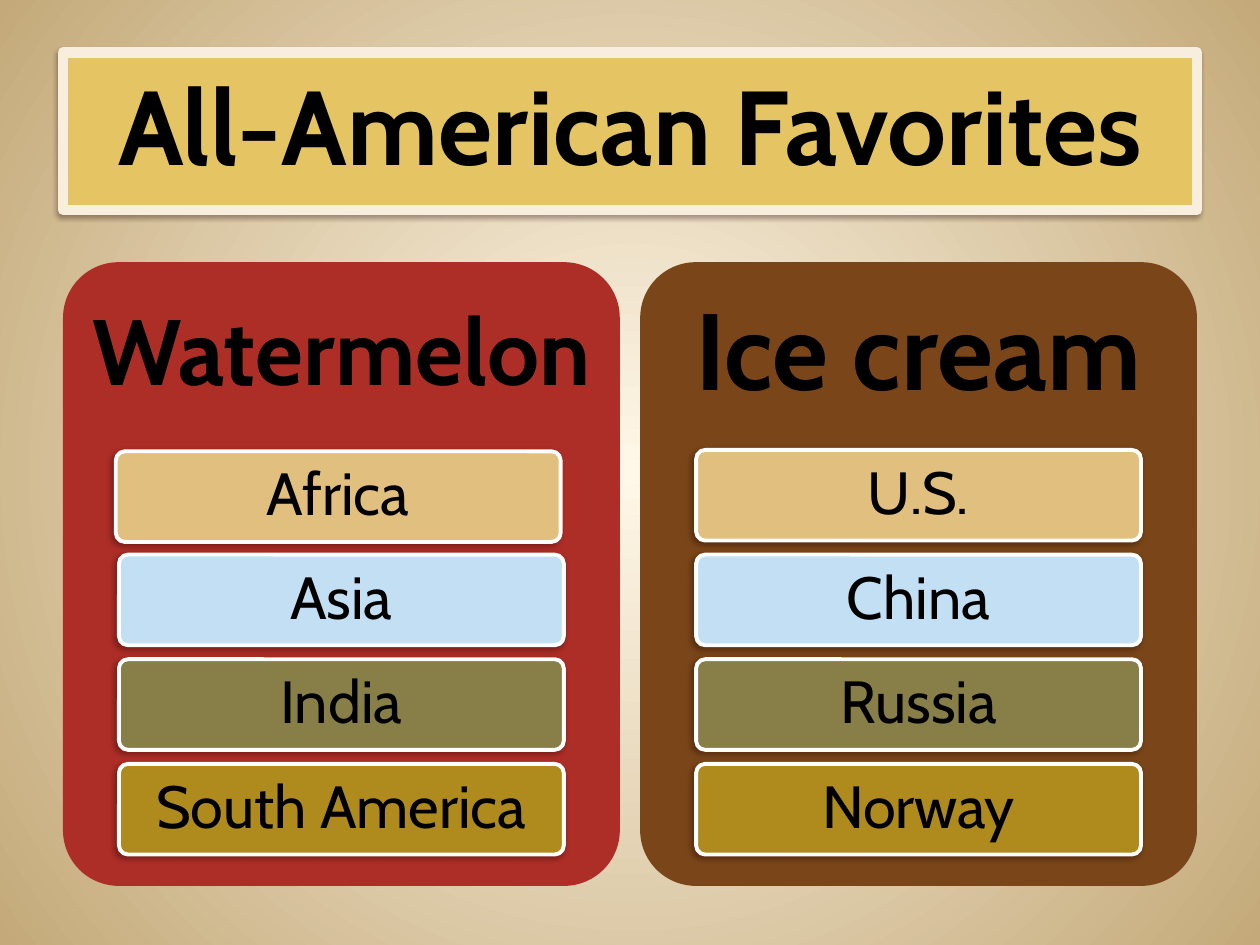
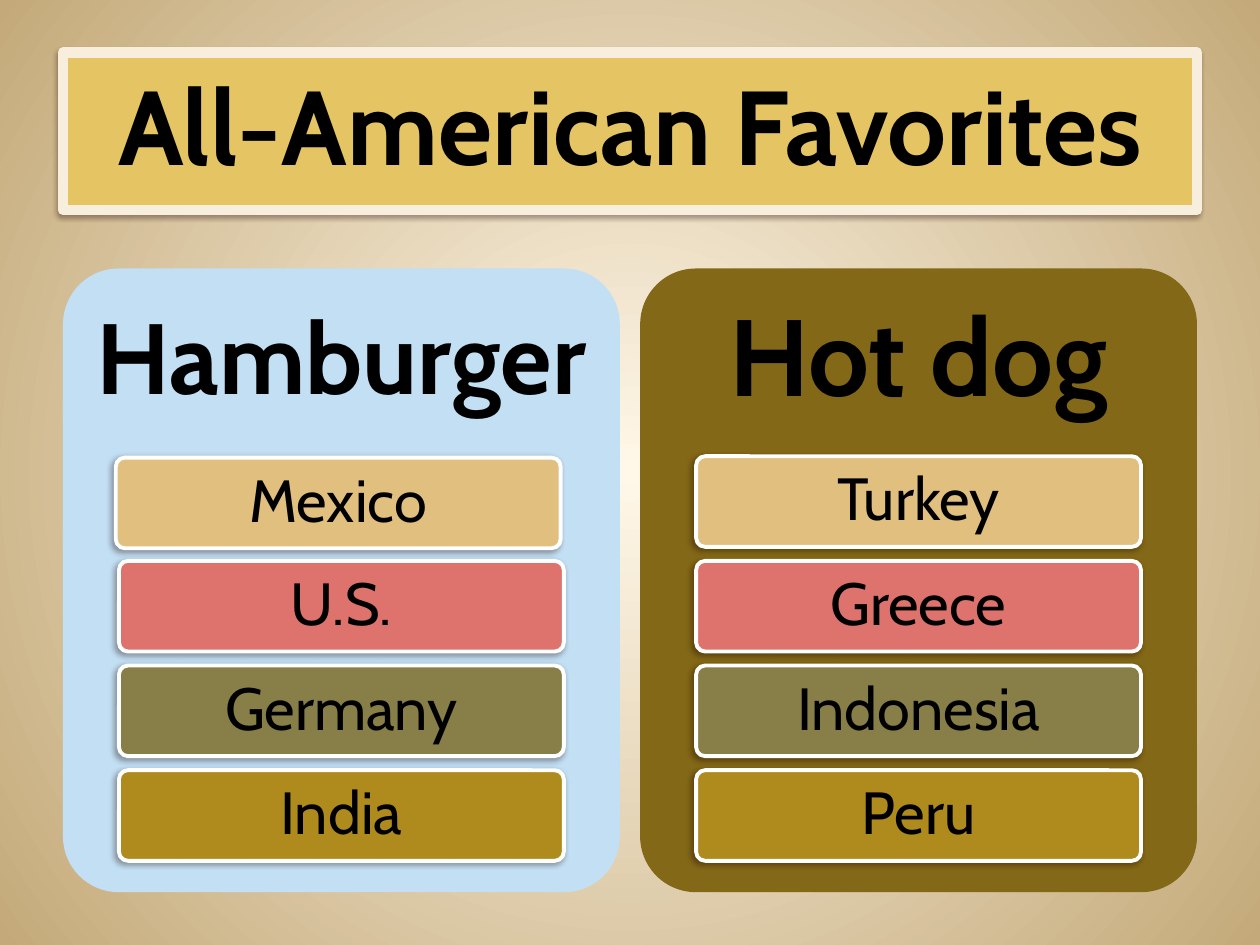
from lxml.etree import SubElement
from pptx import Presentation
from pptx.dml.color import RGBColor
from pptx.enum.shapes import MSO_SHAPE
from pptx.enum.text import MSO_ANCHOR, PP_ALIGN
from pptx.oxml.ns import qn
from pptx.util import Pt

HUES = {
    "glow": "FFF7E8", "sand": "C4AA7A", "gold": "E4C463", "cream": "F7EEDD",
    "white": "FFFFFF", "black": "000000", "shade": "1A0000",
    "red": "AD2E27", "brown": "7A4619", "blue": "C2DFF3", "bronze": "836817",
    "tan": "E1BF7E", "rose": "DE736D", "olive": "877E48", "ochre": "AF8B1E",
}
FONT = "Cabin"
TITLE = "All-American Favorites"
LEFT, RIGHT = 36, 365.8
WIDE, TALL, HEAD = 318.2, 356.4, 106.6
ROW_W, ROW_H, STEP, DROP = 254.2, 51.8, 59.8, 107.3

SLIDES = [
    (149.8, ["tan", "blue", "olive", "ochre"], [
        ("Watermelon", 53, "red", ["Africa", "Asia", "India", "South America"]),
        ("Ice cream", 62, "brown", ["U.S.", "China", "Russia", "Norway"]),
    ]),
    (153.4, ["tan", "rose", "olive", "ochre"], [
        ("Hamburger", 57, "blue", ["Mexico", "U.S.", "Germany", "India"]),
        ("Hot dog", 62, "bronze", ["Turkey", "Greece", "Indonesia", "Peru"]),
    ]),
]


def tint(name):
    """Return the named colour."""
    return RGBColor.from_string(HUES[name])


def set_back(deck):
    """Give every slide the round glow from the middle."""
    master = deck.slide_master
    fill = master.background.fill
    fill.gradient()
    for stop, name in zip(fill.gradient_stops, ("glow", "sand")):
        stop.color.rgb = tint(name)
    grad = master.element.find(".//" + qn("a:gradFill"))
    grad.remove(grad.find(qn("a:lin")))
    ring = SubElement(grad, qn("a:path"), path="circle")
    SubElement(ring, qn("a:fillToRect"), l="50000", t="50000", r="50000", b="50000")


def add_shade(shape):
    """Cast a soft shadow to the lower left."""
    pool = shape.element.spPr.find(qn("a:effectLst"))
    cast = SubElement(pool, qn("a:outerShdw"), blurRad=str(Pt(3.1)),
                      dist=str(Pt(2)), dir="9000000", rotWithShape="0")
    color = SubElement(cast, qn("a:srgbClr"), val=HUES["shade"])
    SubElement(color, qn("a:alpha"), val="35000")


def add_box(slide, kind, area, fill, edge=None, width=0):
    """Draw a filled box, with a line and a shadow if it has an edge."""
    box = slide.shapes.add_shape(kind, *map(Pt, area))
    box.shadow.inherit = False
    box.fill.solid()
    box.fill.fore_color.rgb = tint(fill)
    if kind == MSO_SHAPE.ROUNDED_RECTANGLE:
        box.adjustments[0] = 0.1
    if edge:
        box.line.color.rgb = tint(edge)
        box.line.width = Pt(width)
        add_shade(box)
    else:
        box.line.fill.background()
    return box


def add_text(shape, words, size, bold=False):
    """Write one centred line in a shape."""
    frame = shape.text_frame
    frame.text = words
    frame.word_wrap = True
    frame.vertical_anchor = MSO_ANCHOR.MIDDLE
    if bold:
        pad = Pt(0.3 * size)
        frame.margin_left = frame.margin_right = pad
        frame.margin_top = frame.margin_bottom = pad
    line = frame.paragraphs[0]
    line.alignment = PP_ALIGN.CENTER
    line.line_spacing = 0.9
    font = line.runs[0].font
    font.name, font.size, font.bold = FONT, Pt(size), bold
    font.color.rgb = tint("black")


def add_title(slide):
    """Add the framed title band."""
    band = add_box(slide, MSO_SHAPE.RECTANGLE, (36, 30, 648, 90), "gold", "cream", 6)
    add_text(band, TITLE, 60, True)


def add_panel(slide, left, top, panel, fills):
    """Add a food panel with its heading and a row for each place."""
    food, size, fill, places = panel
    add_box(slide, MSO_SHAPE.ROUNDED_RECTANGLE, (left, top, WIDE, TALL), fill)
    head = slide.shapes.add_textbox(*map(Pt, (left, top, WIDE, HEAD)))
    add_text(head, food, size, True)
    inset = (WIDE - ROW_W) / 2
    for i, (place, hue) in enumerate(zip(places, fills)):
        x, y = left + inset, top + DROP + i * STEP
        if left == LEFT and i == 0:
            x, y = x - 1.8, y + 0.8
        row = add_box(slide, MSO_SHAPE.ROUNDED_RECTANGLE, (x, y, ROW_W, ROW_H),
                      hue, "white", 2.2)
        add_text(row, place, 34)


def main():
    """Build both slides and save them."""
    deck = Presentation()
    deck.slide_width, deck.slide_height = Pt(720), Pt(540)
    set_back(deck)
    for top, fills, panels in SLIDES:
        slide = deck.slides.add_slide(deck.slide_layouts[6])
        add_title(slide)
        for left, panel in zip((LEFT, RIGHT), panels):
            add_panel(slide, left, top, panel, fills)
    deck.save("out.pptx")


if __name__ == "__main__":
    main()
